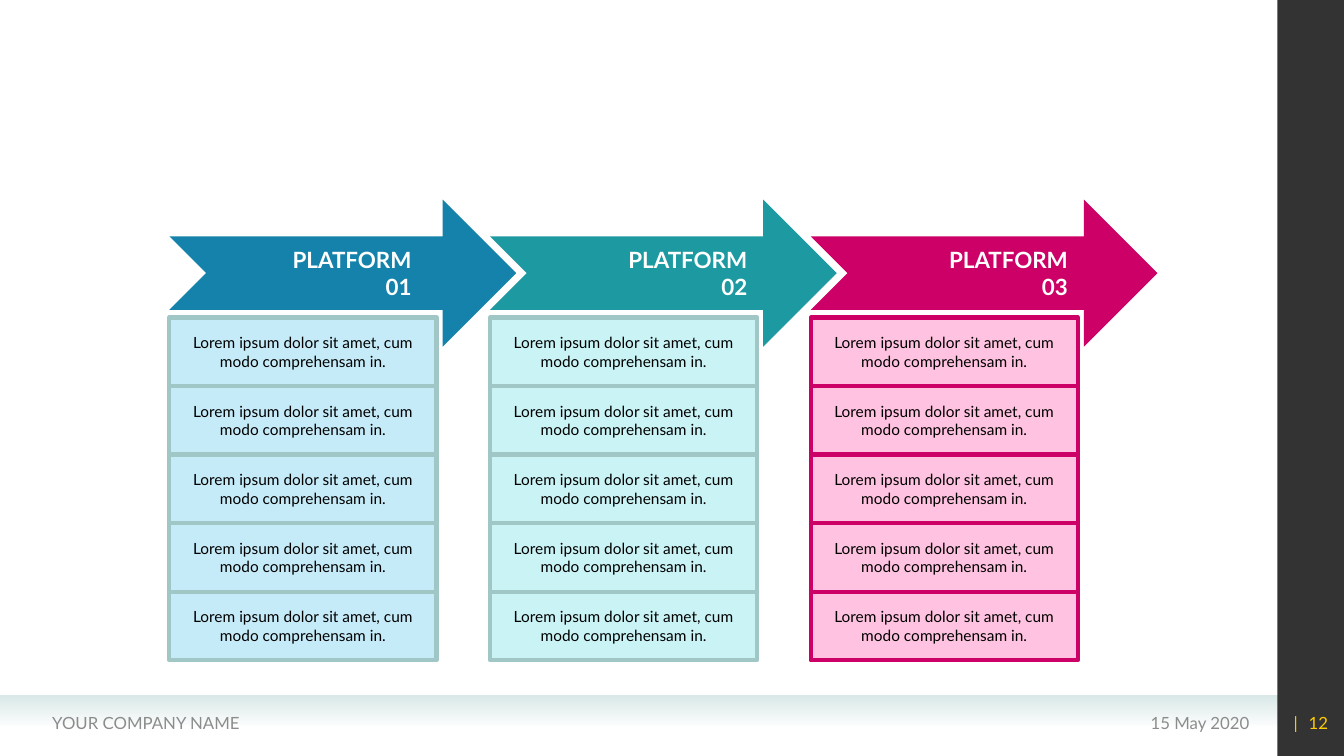
from lxml.etree import SubElement
from pptx import Presentation
from pptx.dml.color import RGBColor
from pptx.enum.shapes import MSO_SHAPE
from pptx.enum.text import MSO_ANCHOR, PP_ALIGN
from pptx.oxml.ns import qn
from pptx.util import Inches, Pt

WHITE = RGBColor(0xFF, 0xFF, 0xFF)
BLACK = RGBColor(0x00, 0x00, 0x00)
GREY = RGBColor(0x8C, 0x8C, 0x8C)
YELLOW = RGBColor(0xFF, 0xCC, 0x00)
MIST = RGBColor(0xD9, 0xE9, 0xE8)
SAGE = RGBColor(0xA0, 0xC7, 0xC5)
BLUE = RGBColor(0x14, 0x82, 0xAB)
PALE_BLUE = RGBColor(0xC6, 0xEB, 0xF8)
TEAL = RGBColor(0x1D, 0x9A, 0xA1)
PALE_TEAL = RGBColor(0xC9, 0xF3, 0xF5)
PINK = RGBColor(0xCC, 0x00, 0x66)
PALE_PINK = RGBColor(0xFF, 0xC2, 0xE0)

FONT = "Lato"
LOREM = "Lorem ipsum dolor sit amet, cum modo comprehensam in."

# title, title's right edge, arrow colour, cell fill, cell border, cell texts
PLATFORMS = [
    ("PLATFORM 01", 4.18, BLUE, PALE_BLUE, SAGE, [LOREM] * 5),
    ("PLATFORM 02", 7.51, TEAL, PALE_TEAL, SAGE, [LOREM] * 5),
    ("PLATFORM 03", 10.69, PINK, PALE_PINK, PINK, [LOREM] * 5),
]

# runs, left, width, alignment, colour
FOOTER = [
    (["15 May 2020"], 9.1, 3.39, PP_ALIGN.RIGHT, GREY),
    (["YOUR COMPANY NAME"], 0.42, 4.9, PP_ALIGN.LEFT, GREY),
]
PAGE_NUMBER = (["|", " ", "12"], 12.6, 0.67, PP_ALIGN.RIGHT, YELLOW)

COLUMN_LEFT, COLUMN_STEP = 1.68, 3.18
ARROW_TOP, ARROW_W, ARROW_H = 1.98, 3.44, 1.46
TITLE_W, TITLE_H = 1.5, 0.6
CELL_TOP, CELL_W, CELL_H = 3.15, 2.65, 0.68
TEXT_W, TEXT_H = 2.32, 0.41
FOOTER_TOP, FOOTER_H = 6.97, 0.4


def add_block(slide, kind, x, y, w, h, fill, border=None):
    sp = slide.shapes.add_shape(kind, Inches(x), Inches(y), Inches(w), Inches(h))
    sp.shadow.inherit = False
    sp.fill.solid()
    sp.fill.fore_color.rgb = fill
    if border is None:
        sp.line.fill.background()
    else:
        sp.line.color.rgb = border
        sp.line.width = Pt(3)
    return sp


def add_text(slide, runs, x, y, w, h, size, color, align, bold=False, inset=(0.1, 0.05)):
    tf = slide.shapes.add_textbox(Inches(x), Inches(y), Inches(w), Inches(h)).text_frame
    tf.word_wrap = True
    tf.vertical_anchor = MSO_ANCHOR.MIDDLE
    tf.margin_left = tf.margin_right = Inches(inset[0])
    tf.margin_top = tf.margin_bottom = Inches(inset[1])
    p = tf.paragraphs[0]
    p.alignment = align
    for text in runs:
        r = p.add_run()
        r.text = text
        r.font.name = FONT
        r.font.size = Pt(size)
        r.font.bold = bold
        r.font.color.rgb = color
    return p


def set_alpha(color_element, percent):
    SubElement(color_element, qn("a:alpha")).set("val", str(percent * 1000))


def add_frame(slide):
    """Footer band, dark side bar and the footer texts."""
    band = add_block(slide, MSO_SHAPE.RECTANGLE, 0, 6.9, 12.67, 0.31, MIST)
    band.fill.gradient()
    band.fill.gradient_angle = 270
    for stop in band.fill.gradient_stops:
        stop.color.rgb = MIST
    set_alpha(list(band.element.iter(qn("a:srgbClr")))[-1], 0)

    bar = add_block(slide, MSO_SHAPE.RECTANGLE, 12.67, 0, 0.67, 7.5, BLACK)
    set_alpha(next(bar.element.iter(qn("a:srgbClr"))), 80)

    for runs, x, w, align, color in FOOTER + [PAGE_NUMBER]:
        p = add_text(slide, runs, x, FOOTER_TOP, w, FOOTER_H, 12, color, align)
    # Letter spacing widens the gap between the bar and the page number
    p.runs[1].font._element.set("spc", "460")


def add_platform(slide, x, title, title_right, color, fill, border, texts):
    add_block(slide, MSO_SHAPE.NOTCHED_RIGHT_ARROW, x, ARROW_TOP, ARROW_W, ARROW_H, color)
    add_text(slide, [title], title_right - TITLE_W, ARROW_TOP + (ARROW_H - TITLE_H) / 2,
             TITLE_W, TITLE_H, 16, WHITE, PP_ALIGN.RIGHT, bold=True)
    for row, text in enumerate(texts):
        y = CELL_TOP + row * CELL_H
        add_block(slide, MSO_SHAPE.RECTANGLE, x, y, CELL_W, CELL_H, fill, border)
        add_text(slide, [text], x + (CELL_W - TEXT_W) / 2, y + (CELL_H - TEXT_H) / 2,
                 TEXT_W, TEXT_H, 11, BLACK, PP_ALIGN.CENTER, inset=(0.04, 0.02))


def main():
    prs = Presentation()
    prs.slide_width, prs.slide_height = Inches(13.33), Inches(7.5)
    slide = prs.slides.add_slide(prs.slide_layouts[6])
    add_frame(slide)
    for column, platform in enumerate(PLATFORMS):
        add_platform(slide, COLUMN_LEFT + column * COLUMN_STEP, *platform)
    prs.save("out.pptx")


if __name__ == "__main__":
    main()
